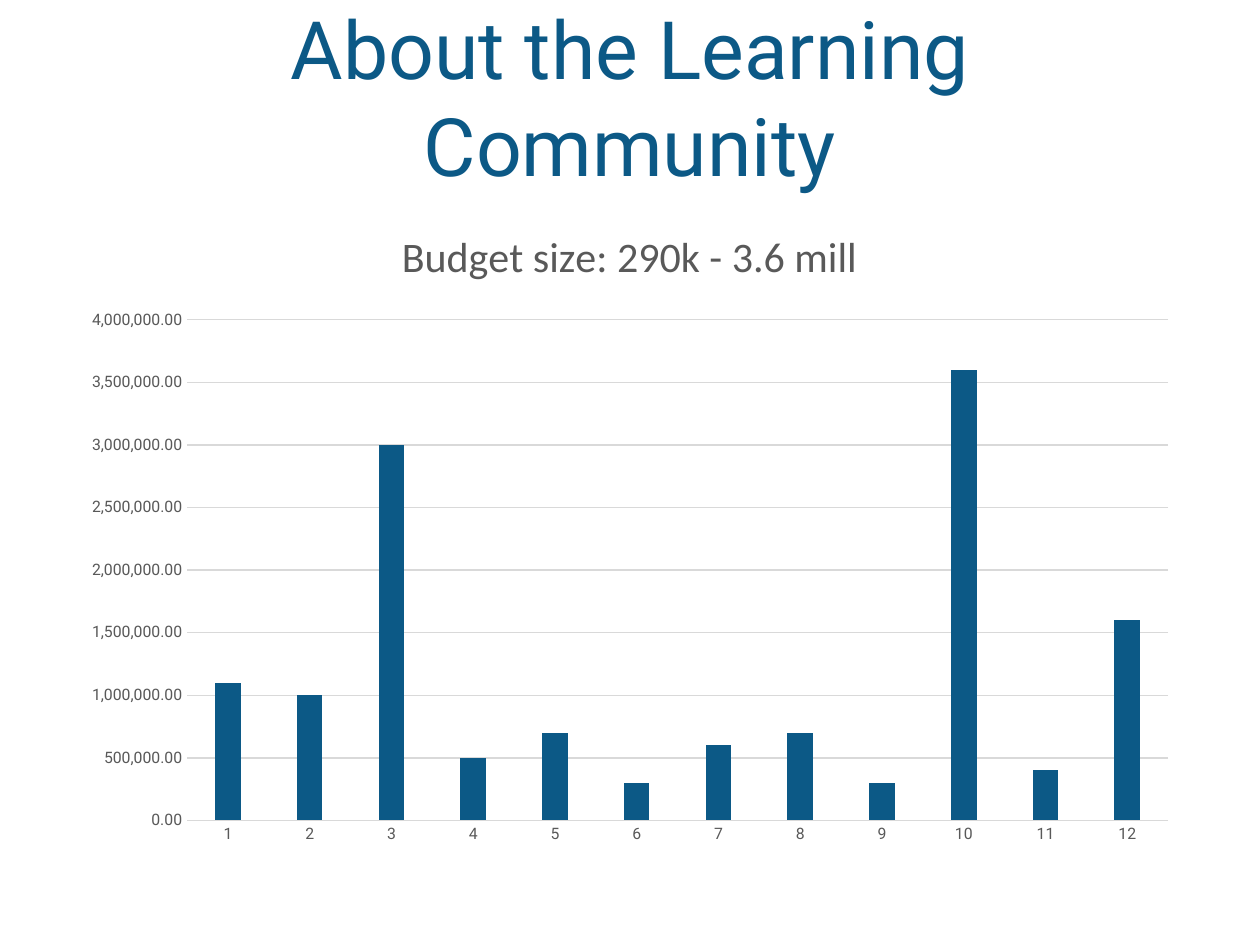
from pptx import Presentation
from pptx import util as u
from pptx.chart.data import CategoryChartData
from pptx.dml.color import RGBColor
from pptx.enum import chart as kinds, text
from pptx.oxml import parse_xml
from pptx.oxml.ns import nsdecls

BLUE = RGBColor(0x0C, 0x59, 0x86)
GRAY = RGBColor(0x59, 0x59, 0x59)
LIGHT = RGBColor(0xD9, 0xD9, 0xD9)

TITLE = "About the Learning Community"
CHART_TITLE = "Budget size: 290k - 3.6 mill"
BUDGETS = [1100000, 1000000, 3000000, 500000, 700000, 300000,
           600000, 700000, 300000, 3600000, 400000, 1600000]

TITLE_BOX = [u.Cm(n) for n in (1.52, 0.3, 22.35, 3.71)]
CHART_BOX = [u.Cm(n) for n in (1.4, 4.04, 22.58, 13.23)]
CHART_TITLE_PERCENT = {"x": 29, "y": 3}
PLOT_PERCENT = {"x": 10.5, "y": 18.2, "w": 87.6, "h": 76.3}

TITLE_FONT = {"name": "Roboto", "size": u.Pt(46)}
CHART_TITLE_FONT = {"name": "Calibri", "size": u.Pt(24), "bold": False}
AXIS_FONT = {"name": "Roboto", "size": u.Pt(9)}


def set_values(target, values):
    for name, value in values.items():
        setattr(target, name, value)


def set_font(font, values, color):
    set_values(font, values)
    font.color.rgb = color


def set_line(line):
    line.color.rgb = LIGHT
    line.width = u.Pt(0.75)


def make_layout(percents, inner=False):
    target = '<c:layoutTarget val="inner"/>' if inner else ""
    modes = "".join(f'<c:{key}Mode val="edge"/>' for key in "xy")
    sizes = "".join(f'<c:{key} val="{value / 100:.3f}"/>'
                    for key, value in percents.items())
    return parse_xml(f'<c:layout {nsdecls("c")}><c:manualLayout>'
                     f'{target}{modes}{sizes}</c:manualLayout></c:layout>')


def replace_layout(parent, layout, position):
    for old in parent.xpath("c:layout"):
        parent.remove(old)
    parent.insert(position, layout)


def add_title(slide):
    title = slide.shapes.title
    set_values(title, dict(zip(("left", "top", "width", "height"), TITLE_BOX)))
    frame = title.text_frame
    frame.text = TITLE
    set_values(frame, {"word_wrap": True, "auto_size": text.MSO_AUTO_SIZE.NONE,
                       "vertical_anchor": text.MSO_ANCHOR.BOTTOM})
    paragraph = frame.paragraphs[0]
    paragraph.alignment = text.PP_ALIGN.CENTER
    set_font(paragraph.runs[0].font, TITLE_FONT, BLUE)


def add_budget_chart(slide):
    data = CategoryChartData(number_format="#,##0.00")
    data.categories = [str(n) for n in range(1, len(BUDGETS) + 1)]
    data.add_series("Series 1", BUDGETS)
    chart = slide.shapes.add_chart(
        kinds.XL_CHART_TYPE.COLUMN_CLUSTERED, *CHART_BOX, data).chart
    chart.has_legend = False
    set_font(chart.font, AXIS_FONT, GRAY)

    frame = chart.chart_title.text_frame
    frame.text = CHART_TITLE
    set_font(frame.paragraphs[0].runs[0].font, CHART_TITLE_FONT, GRAY)
    title_element = chart.chart_title._element
    replace_layout(title_element, make_layout(CHART_TITLE_PERCENT), 1)

    plot = chart.plots[0]
    set_values(plot, {"gap_width": 219, "overlap": -27, "vary_by_categories": False})
    fill = plot.series[0].format.fill
    fill.solid()
    fill.fore_color.rgb = BLUE
    plot_area = chart._chartSpace.chart.plotArea
    replace_layout(plot_area, make_layout(PLOT_PERCENT, inner=True), 0)

    for axis in (chart.category_axis, chart.value_axis):
        set_values(axis, {"major_tick_mark": kinds.XL_TICK_MARK.NONE,
                          "minor_tick_mark": kinds.XL_TICK_MARK.NONE})
        set_font(axis.tick_labels.font, AXIS_FONT, GRAY)
    set_line(chart.category_axis.format.line)
    values = chart.value_axis
    set_values(values, {"minimum_scale": 0, "maximum_scale": 4000000,
                        "major_unit": 500000, "has_major_gridlines": True})
    set_values(values.tick_labels, {"number_format": "#,##0.00",
                                    "number_format_is_linked": False})
    values.format.line.fill.background()
    set_line(values.major_gridlines.format.line)


def main():
    presentation = Presentation()
    set_values(presentation, {"slide_width": u.Cm(25.4), "slide_height": u.Cm(19.05)})
    slide = presentation.slides.add_slide(presentation.slide_layouts[5])
    add_title(slide)
    add_budget_chart(slide)
    presentation.save("out.pptx")


if __name__ == "__main__":
    main()
